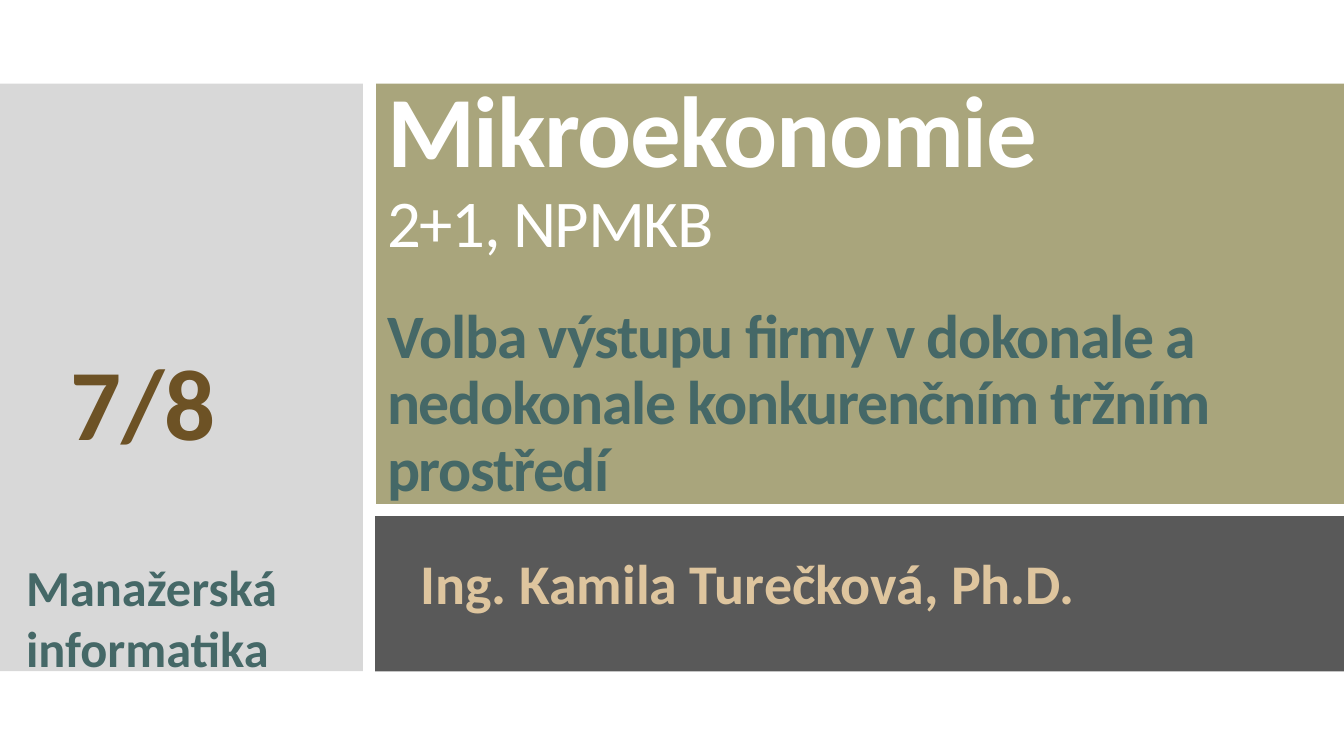
"""Build the opening slide of a microeconomics lecture."""
import pptx
import pptx.dml.color
import pptx.enum.shapes
import pptx.enum.text
import pptx.util
import lxml.etree
from dataclasses import dataclass

Inches = pptx.util.Inches


@dataclass(frozen=True)
class Theme:
    font: str = "Calibri"
    white: str = "FFFFFF"
    olive: str = "A9A57C"
    gray: str = "C8C8C8"
    dark: str = "595959"
    teal: str = "456867"
    brown: str = "6D5225"
    sand: str = "DEC59E"
    huge: float = 72
    code: float = 47.7
    topic: float = 44.1
    name: float = 40
    field: float = 36


def write(para, text, *, font, size, color, bold=True, line=None, before=0, track=0):
    para.alignment = pptx.enum.text.PP_ALIGN.LEFT
    para.space_before = pptx.util.Pt(before)
    if line:
        para.line_spacing = line
    run = para.add_run()
    run.text = text
    run.font.name = font
    run.font.size = pptx.util.Pt(size)
    run.font.bold = bold
    run.font.color.rgb = pptx.dml.color.RGBColor.from_string(color)
    if track:
        run.font._element.set("spc", str(track * 100))


class Deck:
    def __init__(self, theme):
        self.theme = theme
        self.file = pptx.Presentation()
        self.file.slide_width = Inches(13.33)
        self.file.slide_height = Inches(7.5)
        self.slide = self.file.slides.add_slide(self.file.slide_layouts[5])

    def panel(self, box, color, alpha=None):
        kind = pptx.enum.shapes.MSO_SHAPE.RECTANGLE
        shape = self.slide.shapes.add_shape(kind, *map(Inches, box))
        shape.shadow.inherit = False
        shape.line.fill.background()
        shape.fill.solid()
        shape.fill.fore_color.rgb = pptx.dml.color.RGBColor.from_string(color)
        if alpha:
            tone = shape._element.spPr.find(".//" + pptx.oxml.ns.qn("a:srgbClr"))
            lxml.etree.SubElement(tone, pptx.oxml.ns.qn("a:alpha"), val=str(alpha * 1000))

    def title(self, box, lines):
        shape = self.slide.shapes.title
        self.slide.shapes._spTree.append(shape._element)
        shape.left, shape.top, shape.width, shape.height = map(Inches, box)
        frame = shape.text_frame
        frame.word_wrap = True
        frame.auto_size = pptx.enum.text.MSO_AUTO_SIZE.NONE
        frame.vertical_anchor = pptx.enum.text.MSO_ANCHOR.BOTTOM
        for rank, (text, form) in enumerate(lines):
            para = frame.add_paragraph() if rank else frame.paragraphs[0]
            write(para, text, font=self.theme.font, line=0.9, track=-1, **form)

    def label(self, box, text, **form):
        frame = self.slide.shapes.add_textbox(*map(Inches, box)).text_frame
        frame.word_wrap = True
        write(frame.paragraphs[0], text, font=self.theme.font, **form)

    def save(self):
        self.file.save("out.pptx")


def main():
    theme = Theme()
    deck = Deck(theme)
    deck.panel((0, 0.83, 3.6, 5.83), theme.gray, alpha=70)
    deck.panel((3.73, 0.83, 9.6, 4.17), theme.olive)
    deck.title((3.74, 2.53, 9.59, 2.53), [
        ("Mikroekonomie", dict(size=theme.huge, color=theme.white)),
        ("2+1, NPMKB", dict(size=theme.code, color=theme.white, bold=False)),
        ("Volba výstupu firmy v dokonale a nedokonale konkurenčním tržním prostředí",
         dict(size=theme.topic, color=theme.teal, before=31)),
    ])
    deck.panel((3.72, 5.12, 9.61, 1.54), theme.dark)
    deck.label((4.07, 5.47, 7.86, 0.84), "Ing. Kamila Turečková, Ph.D.",
               size=theme.name, color=theme.sand, line=0.9, before=12)
    deck.label((0.6, 3.55, 2.63, 1.09), "7/8",
               size=theme.huge, color=theme.brown, line=0.8)
    deck.label((0.16, 5.47, 3.07, 1.31), "Manažerská informatika",
               size=theme.field, color=theme.teal)
    deck.save()


if __name__ == "__main__":
    main()
